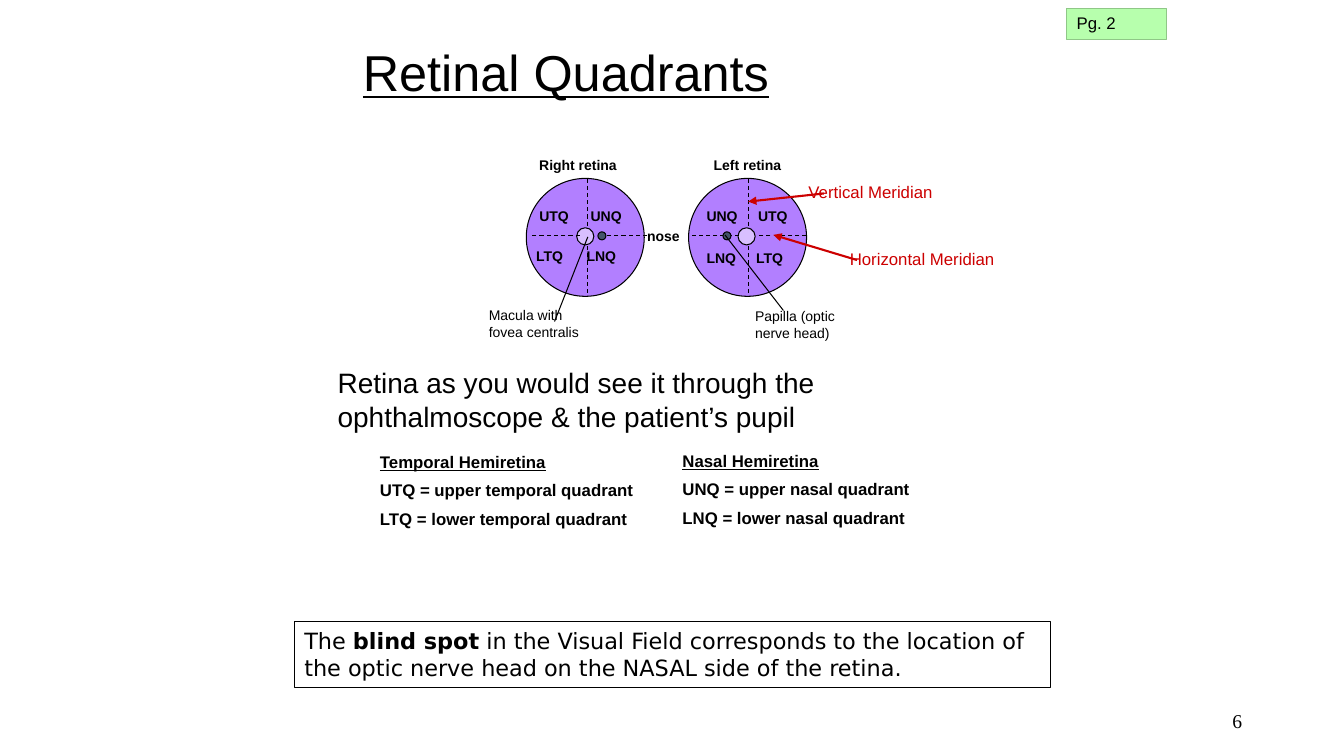
from lxml import etree
from pptx import Presentation
from pptx.dml.color import RGBColor
from pptx.enum.dml import MSO_LINE
from pptx.enum.shapes import MSO_CONNECTOR, MSO_SHAPE
from pptx.enum.text import MSO_ANCHOR, PP_ALIGN
from pptx.oxml.ns import qn
from pptx.util import Inches, Pt

BLACK = RGBColor(0x00, 0x00, 0x00)
WHITE = RGBColor(0xFF, 0xFF, 0xFF)
PURPLE = RGBColor(0x66, 0x00, 0xFF)
SLATE = RGBColor(0x44, 0x54, 0x6A)
RED = RGBColor(0xCC, 0x00, 0x00)
GREEN = RGBColor(0xB7, 0xFF, 0xAD)
DARK_GREEN = RGBColor(0x8F, 0xC7, 0x87)

STRAIGHT = MSO_CONNECTOR.STRAIGHT
ELLIPSE = MSO_SHAPE.OVAL
RECTANGLE = MSO_SHAPE.RECTANGLE
DASH = MSO_LINE.DASH
LEFT = PP_ALIGN.LEFT
RIGHT = PP_ALIGN.RIGHT
TOP = MSO_ANCHOR.TOP
MIDDLE = MSO_ANCHOR.MIDDLE

LABEL = {"name": "Arial", "size": Pt(10), "bold": True}
CALLOUT = {"name": "Arial", "size": Pt(10)}
BODY = {"name": "Arial", "size": Pt(12)}
MERIDIAN = {**BODY, "color": RED}
KEY = {**BODY, "bold": True}
KEY_HEADING = {**KEY, "underline": True}
TITLE = {"name": "Arial", "size": Pt(36), "underline": True}
CAPTION = {"name": "Arial", "size": Pt(20)}
NOTE = {"name": "DejaVu Sans", "size": Pt(16)}
NOTE_BOLD = {**NOTE, "bold": True}
NUMBER = {"name": "Times New Roman", "size": Pt(14)}

QUADRANTS = [
    ("UTQ", 5.25, 2.01), ("UTQ", 7.42, 2.01),
    ("LTQ", 5.22, 2.41), ("LTQ", 7.4, 2.43),
    ("LNQ", 6.91, 2.43), ("LNQ", 5.72, 2.41),
    ("UNQ", 5.76, 2.01), ("UNQ", 6.91, 2.01),
]


def write(shape, paragraphs, align=LEFT, anchor=TOP, line_spacing=None):
    frame = shape.text_frame
    frame.word_wrap = True
    frame.vertical_anchor = anchor
    for index, spans in enumerate(paragraphs):
        para = frame.add_paragraph() if index else frame.paragraphs[0]
        para.alignment = align
        if line_spacing:
            para.line_spacing = line_spacing
        if index:
            para.space_before = Pt(6)
        for text, style in spans:
            span = para.add_run()
            span.text = text
            span.font.color.rgb = BLACK
            for key, value in style.items():
                if key == "color":
                    span.font.color.rgb = value
                else:
                    setattr(span.font, key, value)


def add_text(page, place, paragraphs, **layout):
    box = page.shapes.add_textbox(*map(Inches, place))
    write(box, paragraphs, **layout)


def add_shape(page, kind, place, fill=None, line=BLACK, opacity=None):
    shape = page.shapes.add_shape(kind, *map(Inches, place))
    shape.shadow.inherit = False
    shape.line.color.rgb = line
    shape.line.width = Pt(0.75)
    if fill is None:
        shape.fill.background()
        return shape
    shape.fill.solid()
    shape.fill.fore_color.rgb = fill
    if opacity:
        color = shape.fill._xPr.find(qn("a:solidFill"))[0]
        etree.SubElement(color, qn("a:alpha"), val=str(opacity * 1000))
    return shape


def add_line(page, start, end, color=BLACK, width=0.75, dash=None, arrow=False):
    line = page.shapes.add_connector(STRAIGHT, *map(Inches, (*start, *end)))
    line.line.color.rgb = color
    line.line.width = Pt(width)
    if dash:
        line.line.dash_style = dash
    if arrow:
        etree.SubElement(line.line._get_or_add_ln(), qn("a:tailEnd"), type="triangle")
    etree.SubElement(line._element.spPr, qn("a:effectLst"))


def add_circles(page, lefts, top, size, fill, opacity=None):
    for left in lefts:
        add_shape(page, ELLIPSE, (left, top, size, size), fill, opacity=opacity)


def add_meridians(page, x, outer_left, inner_right):
    for top in (1.77, 2.44):
        add_line(page, (x, top), (x, top + 0.5), dash=DASH)
    for right in (inner_right, outer_left + 0.5):
        add_line(page, (right, 2.34), (right - 0.5, 2.34), dash=DASH)


def add_key(page, left, top, heading, entries):
    paragraphs = [[(heading, KEY_HEADING)]] + [[(entry, KEY)] for entry in entries]
    add_text(page, (left, top, 3.08, 0.9), paragraphs)


def add_retinas(page):
    add_circles(page, (5.22, 6.83), 1.77, 1.17, PURPLE, opacity=50)
    add_circles(page, (5.72, 7.32), 2.26, 0.17, WHITE, opacity=50)
    add_meridians(page, 5.83, 5.25, 6.42)
    add_meridians(page, 7.42, 6.83, 8)
    for text, left, top in [("nose", 6.32, 2.21), *QUADRANTS]:
        add_text(page, (left, top, 0.58, 0.27), [[(text, LABEL)]])
    for text, left in (("Right retina", 5.25), ("Left retina", 6.98)):
        add_text(page, (left, 1.5, 1.17, 0.27), [[(text, LABEL)]])
    add_circles(page, (5.93, 7.17), 2.3, 0.08, SLATE)


def add_callouts(page):
    add_text(page, (7.39, 3, 1.2, 0.43), [[("Papilla (optic nerve head)", CALLOUT)]])
    add_text(page, (4.75, 2.99, 1.17, 0.43), [[("Macula with fovea centralis", CALLOUT)]])
    add_line(page, (5.5, 3.19), (5.83, 2.35))
    add_line(page, (7.77, 3.08), (7.19, 2.33))
    add_text(page, (8.33, 2.42, 1.75, 0.3), [[("Horizontal Meridian", MERIDIAN)]])
    add_text(page, (7.92, 1.75, 1.75, 0.3), [[("Vertical Meridian", MERIDIAN)]])
    add_line(page, (8.17, 1.92), (7.42, 2), RED, 1.5, arrow=True)
    add_line(page, (8.5, 2.58), (7.67, 2.33), RED, 1.5, arrow=True)


def main():
    deck = Presentation()
    deck.slide_width = Inches(13.33)
    deck.slide_height = Inches(7.5)
    page = deck.slides.add_slide(deck.slide_layouts[6])

    add_text(page, (9.42, 6.95, 3, 0.4), [[("6", NUMBER)]], align=RIGHT, anchor=MIDDLE)
    add_text(page, (3.5, 0.33, 6.17, 0.83), [[("Retinal Quadrants", TITLE)]],
             anchor=MIDDLE, line_spacing=0.9)
    add_retinas(page)
    add_callouts(page)
    add_text(page, (3.25, 3.58, 7, 0.77), [[(
        "Retina as you would see it through the ophthalmoscope & the patient’s pupil",
        CAPTION)]])
    add_key(page, 3.67, 4.43, "Temporal Hemiretina",
            ("UTQ = upper temporal quadrant", "LTQ = lower temporal quadrant"))
    add_key(page, 6.67, 4.42, "Nasal Hemiretina",
            ("UNQ = upper nasal quadrant", "LNQ = lower nasal quadrant"))

    page_tag = add_shape(page, RECTANGLE, (10.58, 0.08, 0.99, 0.31), GREEN, DARK_GREEN)
    write(page_tag, [[("Pg. 2", BODY)]])
    blind_spot = add_shape(page, RECTANGLE, (2.92, 6.17, 7.5, 0.65))
    write(blind_spot, [[
        ("The ", NOTE),
        ("blind spot", NOTE_BOLD),
        (" in the Visual Field corresponds to the location of the optic nerve head"
         " on the NASAL side of the retina.", NOTE),
    ]])
    deck.save("out.pptx")


if __name__ == "__main__":
    main()
